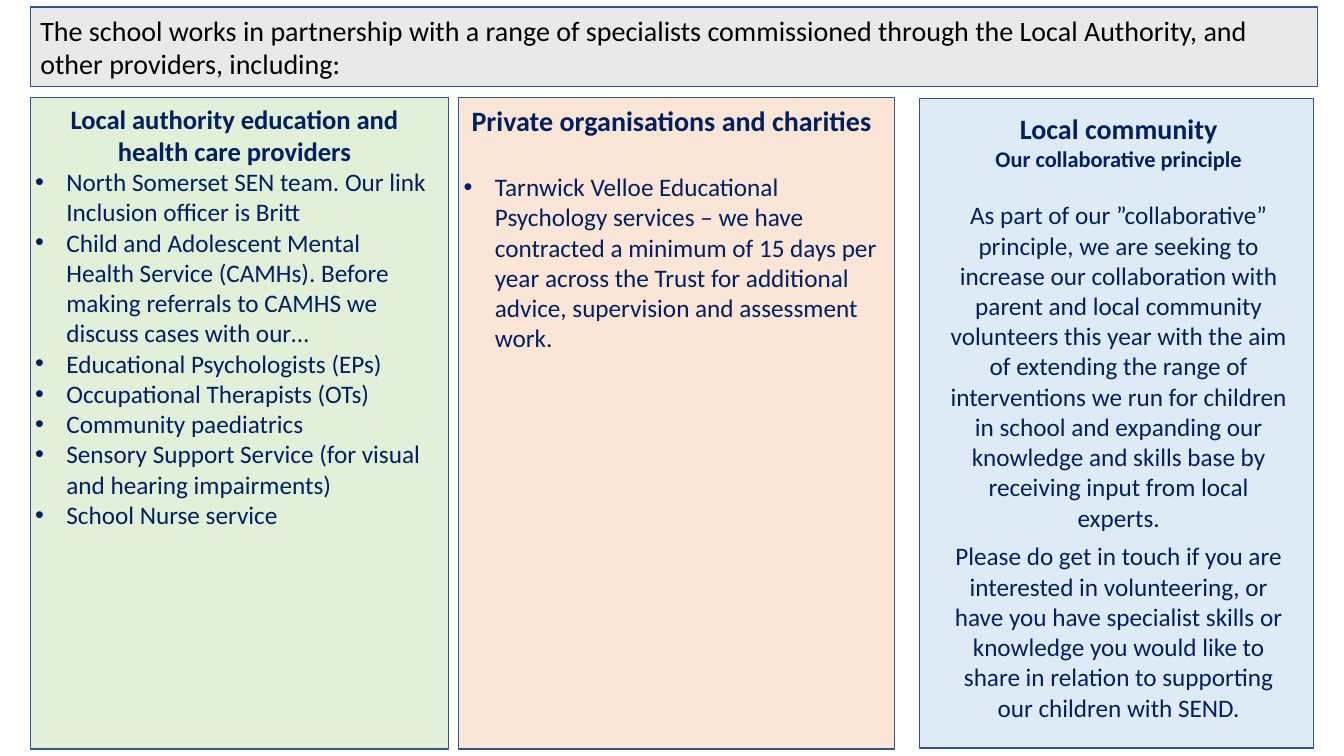
from dataclasses import dataclass

from pptx import Presentation
from pptx import util as u
from pptx.dml.color import RGBColor
from pptx.enum import shapes, text
from pptx.oxml.ns import qn
from lxml import etree


@dataclass(frozen=True)
class Theme:
    font: str = "Calibri"
    ink: str = "000000"
    navy: str = "002060"
    edge: str = "325491"
    grey: str = "D0CECE"
    green: str = "E2F0D9"
    peach: str = "FBE5D6"
    blue: str = "DEEBF7"
    large: int = 20
    head: int = 19
    body: int = 18
    small: int = 16


T = Theme()

INTRO = ("The school works in partnership with a range of specialists commissioned "
         "through the Local Authority, and other providers, including:")
PUBLIC = [
    "North Somerset SEN team. Our link Inclusion officer is Britt",
    "Child and Adolescent Mental Health Service (CAMHs). Before making referrals "
    "to CAMHS we discuss cases with our…",
    "Educational Psychologists (EPs)",
    "Occupational Therapists (OTs)",
    "Community paediatrics",
    "Sensory Support Service (for visual and hearing impairments)",
    "School Nurse service",
]
PRIVATE = ("Tarnwick Velloe Educational Psychology services – we have contracted "
           "a minimum of 15 days per year across the Trust for additional advice, "
           "supervision and assessment work.")
AIM = ("As part of our ”collaborative” principle, we are seeking to increase our "
       "collaboration with parent and local community volunteers this year with "
       "the aim of extending the range of interventions we run for children in "
       "school and expanding our knowledge and skills base by receiving input "
       "from local experts.")
INVITE = ("Please do get in touch if you are interested in volunteering, or have you "
          "have specialist skills or knowledge you would like to share in relation "
          "to supporting our children with SEND.")


def paint(shape, fill):
    shape.fill.solid()
    shape.fill.fore_color.rgb = RGBColor.from_string(fill)
    shape.line.color.rgb = RGBColor.from_string(T.edge)
    shape.line.width = u.Pt(1)


def style(para, size, color, bold=False):
    font = para.font
    font.name, font.size, font.bold = T.font, u.Pt(size), bold
    font.color.rgb = RGBColor.from_string(color)


def add_intro(slide):
    bar = slide.shapes.title
    bar.left, bar.top = u.Inches(0.3), u.Inches(0.07)
    bar.width, bar.height = u.Inches(12.77), u.Inches(0.79)
    paint(bar, T.grey)
    tint = bar.fill._xPr.find(qn("a:solidFill"))[0]
    etree.SubElement(tint, qn("a:alpha"), val="44000")
    frame = bar.text_frame
    frame.text = INTRO
    frame.word_wrap = True
    frame.auto_size = text.MSO_AUTO_SIZE.NONE
    frame.vertical_anchor = text.MSO_ANCHOR.MIDDLE
    para = frame.paragraphs[0]
    para.alignment = text.PP_ALIGN.LEFT
    style(para, T.large, T.ink)


def add_panel(slide, box, fill):
    panel = slide.shapes.add_shape(shapes.MSO_SHAPE.RECTANGLE, *map(u.Inches, box))
    panel.shadow.inherit = False
    paint(panel, fill)


def add_frame(slide, box):
    frame = slide.shapes.add_textbox(*map(u.Inches, box)).text_frame
    frame.word_wrap = True
    return frame


def add_para(frame, words, size, bold=False, gap=0):
    """Add a paragraph, reusing the blank one of a new frame."""
    para = frame.paragraphs[0]
    if para.runs:
        para = frame.add_paragraph()
    para.add_run().text = words
    para.space_before = u.Pt(gap)
    style(para, size, T.navy, bold)
    return para


def add_line(frame, words, size, bold=False, gap=0):
    """Add a centred paragraph."""
    add_para(frame, words, size, bold, gap).alignment = text.PP_ALIGN.CENTER


def add_bullet(frame, words, gap=0):
    props = add_para(frame, words, T.body, gap=gap)._p.get_or_add_pPr()
    indent = u.Inches(0.31)
    props.set("marL", str(indent))
    props.set("indent", str(-indent))
    etree.SubElement(props, qn("a:buFont"), typeface="Arial")
    etree.SubElement(props, qn("a:buChar"), char="•")
    # Bullet marks must come before the default run properties.
    props.append(props.find(qn("a:defRPr")))


def main():
    deck = Presentation()
    deck.slide_width, deck.slide_height = u.Inches(13.33), u.Inches(7.5)
    slide = deck.slides.add_slide(deck.slide_layouts[5])
    add_intro(slide)

    add_panel(slide, (0.3, 0.97, 4.15, 6.46), T.green)
    add_panel(slide, (4.55, 0.97, 4.32, 6.46), T.peach)
    add_panel(slide, (9.12, 0.98, 3.91, 6.44), T.blue)

    private = add_frame(slide, (4.5, 0.98, 4.32, 3.13))
    add_line(private, "Private organisations and charities", T.large, True)
    add_bullet(private, PRIVATE, gap=24.4)

    local = add_frame(slide, (9.29, 1.06, 3.61, 6.21))
    add_line(local, "Local community", T.large, True)
    add_line(local, "Our collaborative principle", T.small, True)
    add_line(local, AIM, T.body, gap=19.5)
    add_line(local, INVITE, T.body, gap=6.1)

    public = add_frame(slide, (0.25, 0.97, 4.15, 4.38))
    add_line(public, "Local authority education and health care providers",
             T.head, True)
    for service in PUBLIC:
        add_bullet(public, service)

    deck.save("out.pptx")


if __name__ == "__main__":
    main()
